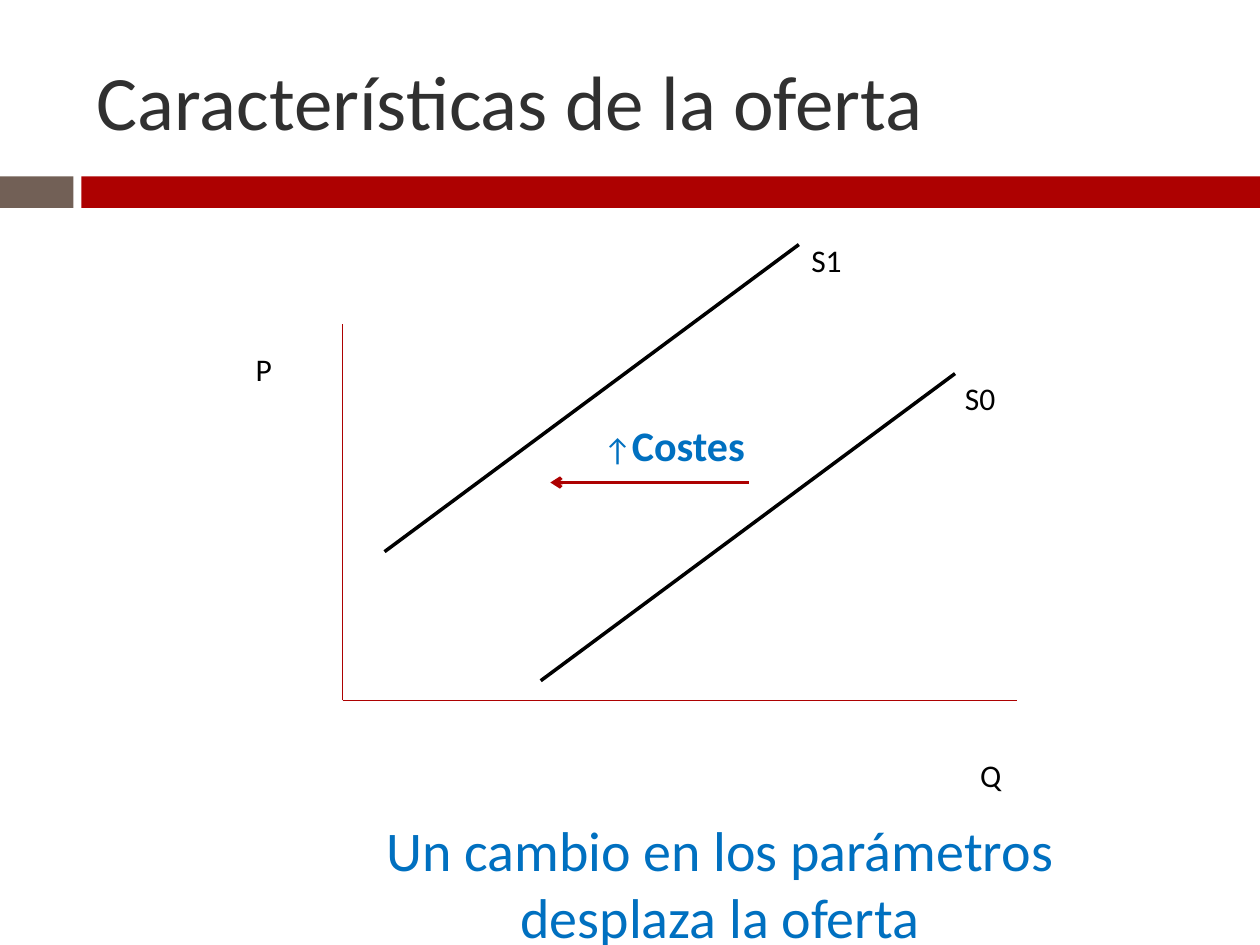
from lxml import etree
from pptx import Presentation
from pptx.dml.color import RGBColor
from pptx.enum import shapes, text
from pptx.oxml import ns
from pptx.util import Pt

RED = RGBColor(0xAD, 0x01, 0x01)
BROWN = RGBColor(0x72, 0x60, 0x56)
GRAY = RGBColor(0x30, 0x30, 0x30)
BLACK = RGBColor(0, 0, 0)
BLUE = RGBColor(0x00, 0x70, 0xC0)


def add_line(slide, start, end, color, width):
    line = slide.shapes.add_connector(
        shapes.MSO_CONNECTOR.STRAIGHT, *[Pt(value) for value in start + end])
    line.line.color.rgb = color
    line.line.width = Pt(width)
    etree.SubElement(line._element.spPr, ns.qn("a:effectLst"))
    return line


def add_run(paragraph, wording, size, color, bold=False):
    run = paragraph.add_run()
    run.text = wording
    run.font.name = "Calibri"
    run.font.size = Pt(size)
    run.font.bold = bold
    run.font.color.rgb = color


presentation = Presentation()
presentation.slide_width = Pt(720)
presentation.slide_height = Pt(540)
slide = presentation.slides.add_slide(presentation.slide_layouts[5])

for left, width, color in [(0, 42, BROWN), (46.5, 673.5, RED)]:
    band = slide.shapes.add_shape(
        shapes.MSO_SHAPE.RECTANGLE, Pt(left), Pt(100.8), Pt(width), Pt(18))
    band.shadow.inherit = False
    band.fill.solid()
    band.fill.fore_color.rgb = color
    band.line.fill.background()

title = slide.shapes.title
title.left, title.top, title.width, title.height = Pt(48), Pt(18), Pt(642), Pt(78)
title.text_frame.vertical_anchor = text.MSO_ANCHOR.MIDDLE
paragraph = title.text_frame.paragraphs[0]
paragraph.alignment = text.PP_ALIGN.LEFT
add_run(paragraph, "Características de la oferta", 44, GRAY)

origin = (195.75, 400.25)
for axis_end in [(195.75, 185), (581, 400.25)]:
    add_line(slide, origin, axis_end, RED, 0.79)

for left, bottom in [(309, 389), (219.75, 315.25)]:
    add_line(slide, (left, bottom), (left + 236.75, bottom - 175.5), BLACK, 2)

arrow = add_line(slide, (427.75, 275.75), (314.5, 275.75), RED, 2)
etree.SubElement(arrow.line._get_or_add_ln(), ns.qn("a:tailEnd"), type="arrow")

LEFT, CENTER = text.PP_ALIGN.LEFT, text.PP_ALIGN.CENTER
labels = [
    (544.3, 213.1, 34, 29, False, LEFT, [("S0", 18, BLACK)]),
    (456.5, 133.9, 34, 29, False, LEFT, [("S1", 18, BLACK)]),
    (139, 196.5, 57, 29, True, LEFT, [("P", 18, BLACK)]),
    (553, 428.4, 79, 29, True, LEFT, [("Q", 18, BLACK)]),
    (202.3, 462.2, 418.3, 85, True, CENTER,
     [("Un cambio en los parámetros desplaza la oferta", 32, BLUE)]),
    (337.7, 236.2, 187.2, 36, True, LEFT,
     [("↑", 18, BLUE), ("Costes", 24, BLUE, True)]),
]
for left, top, width, height, wraps, alignment, runs in labels:
    label = slide.shapes.add_textbox(Pt(left), Pt(top), Pt(width), Pt(height))
    label.text_frame.word_wrap = wraps
    label.text_frame.auto_size = text.MSO_AUTO_SIZE.SHAPE_TO_FIT_TEXT
    paragraph = label.text_frame.paragraphs[0]
    paragraph.alignment = alignment
    for run in runs:
        add_run(paragraph, *run)

presentation.save("out.pptx")
